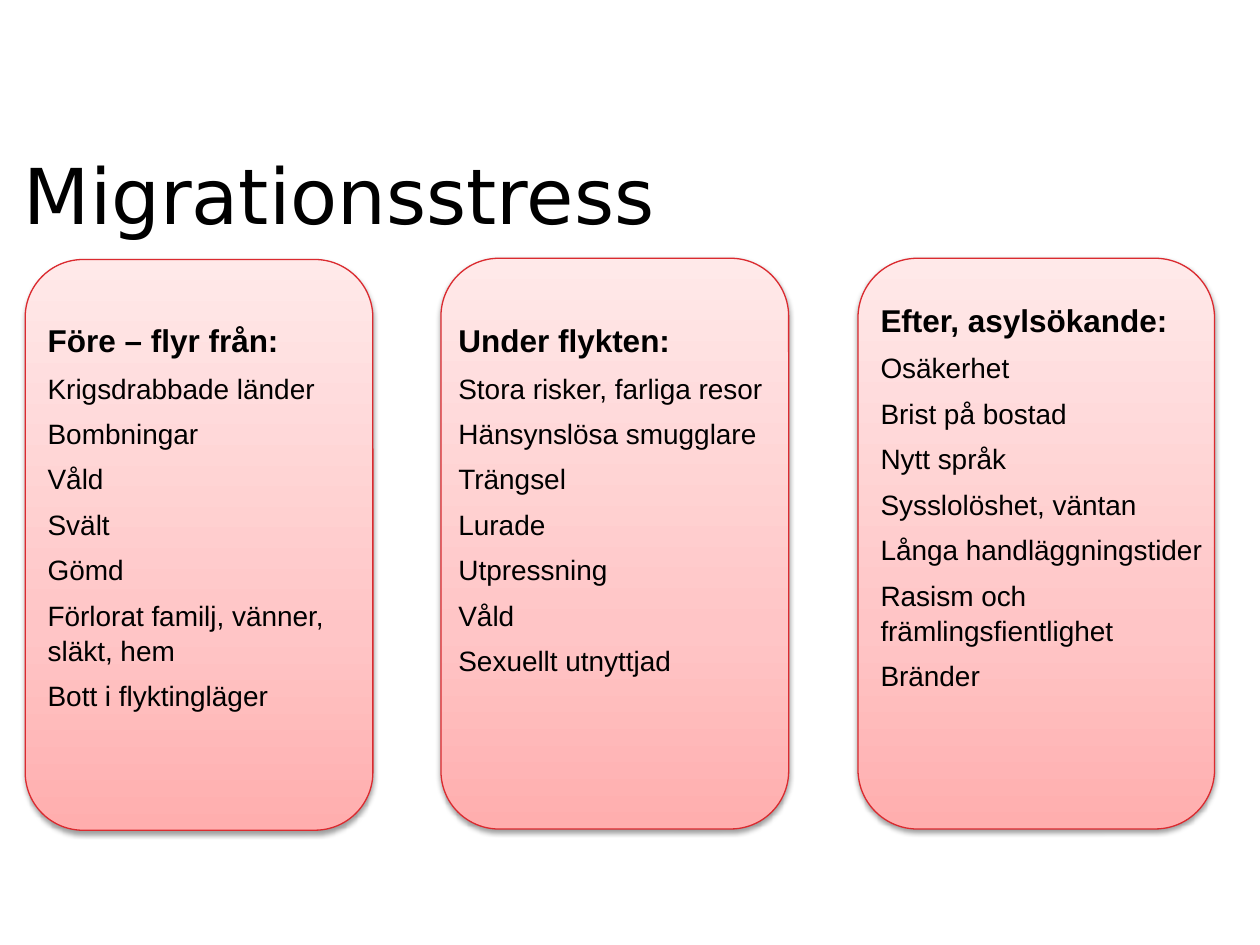
"""Build the slide on migration stress with three phase cards."""
from lxml import etree
from pptx import Presentation
from pptx.dml.color import RGBColor
from pptx.enum.shapes import MSO_SHAPE
from pptx.oxml import parse_xml
from pptx.oxml.ns import nsdecls
from pptx.util import Inches, Pt

ROUNDED = MSO_SHAPE.ROUNDED_RECTANGLE

TITLE = "Migrationsstress"
PHASES = [
    {"heading": "Före – flyr från:",
     "stresses": ["Krigsdrabbade länder", "Bombningar", "Våld", "Svält", "Gömd",
                  "Förlorat familj, vänner, släkt, hem", "Bott i flyktingläger"],
     "card": (0.2, 2.06, 2.76), "list": (0.28, 2.49, 2.52, 3.7)},
    {"heading": "Under flykten:",
     "stresses": ["Stora risker, farliga resor", "Hänsynslösa smugglare", "Trängsel",
                  "Lurade", "Utpressning", "Våld", "Sexuellt utnyttjad"],
     "card": (3.5, 2.05, 2.76), "list": (3.54, 2.49, 2.64, 3.46)},
    {"heading": "Efter, asylsökande:",
     "stresses": ["Osäkerhet", "Brist på bostad", "Nytt språk", "Sysslolöshet, väntan",
                  "Långa handläggningstider", "Rasism och främlingsfientlighet", "Bränder"],
     "card": (6.81, 2.05, 2.83), "list": (6.89, 2.33, 2.76, 3.78)},
]
CARD_HEIGHT = 4.53
TITLE_AREA = (0.09, 1.12, 9.76, 1.02)

THEME = {
    "ink": RGBColor.from_string("000000"),
    "outline": RGBColor.from_string("DB2A2F"),
    "gradient": [(0, "FFAEAE"), (35, "FFC5C6"), (100, "FFE9E9")],
    "title": {"name": "DejaVu Sans", "size": Pt(44), "bold": False},
    "heading": {"name": "Arial", "size": Pt(18), "bold": True},
    "stress": {"name": "Arial", "size": Pt(16), "bold": False},
}
LIST_FORMAT = {"space_before": Pt(6), "line_spacing": 1.04}


def style(paragraph, role):
    for attribute, value in THEME[role].items():
        setattr(paragraph.font, attribute, value)
    paragraph.font.color.rgb = THEME["ink"]


def add_text(slide, area, lines):
    frame = slide.shapes.add_textbox(*map(Inches, area)).text_frame
    frame.word_wrap = True
    for index, (role, words) in enumerate(lines):
        paragraph = frame.add_paragraph() if index else frame.paragraphs[0]
        paragraph.text = words
        style(paragraph, role)
        if index:
            for attribute, value in LIST_FORMAT.items():
                setattr(paragraph, attribute, value)
        elif role == "heading":
            paragraph.line_spacing = LIST_FORMAT["line_spacing"]


def add_card(slide, left, top, width):
    card = slide.shapes.add_shape(ROUNDED, *map(Inches, (left, top, width, CARD_HEIGHT)))
    card.line.color.rgb = THEME["outline"]
    card.line.width = Pt(0.75)
    card.shadow.inherit = False
    card.fill.gradient()
    card.fill.gradient_angle = 90
    properties = card.element.spPr
    stops = properties.find(".//{*}gsLst")
    for stop in list(stops):
        stops.remove(stop)
    for position, color in THEME["gradient"]:
        stops.append(parse_xml(
            f'<a:gs {nsdecls("a")} pos="{position * 1000}"><a:srgbClr val="{color}"/></a:gs>'))
    effects = properties.find("{*}effectLst")
    shadow = etree.SubElement(
        effects, effects.tag.replace("effectLst", "outerShdw"),
        blurRad=str(Pt(3.1)), dist=str(Pt(1.6)), dir="5400000", rotWithShape="0")
    shadow.append(parse_xml(
        f'<a:srgbClr {nsdecls("a")} val="000000"><a:alpha val="38000"/></a:srgbClr>'))


def main():
    deck = Presentation()
    deck.slide_width, deck.slide_height = Inches(10), Inches(7.5)
    slide = deck.slides.add_slide(deck.slide_layouts[6])
    add_text(slide, TITLE_AREA, [("title", TITLE)])
    for phase in PHASES:
        add_card(slide, *phase["card"])
    for phase in PHASES:
        stresses = [("stress", words) for words in phase["stresses"]]
        add_text(slide, phase["list"], [("heading", phase["heading"]), *stresses])
    deck.save("out.pptx")


if __name__ == "__main__":
    main()
